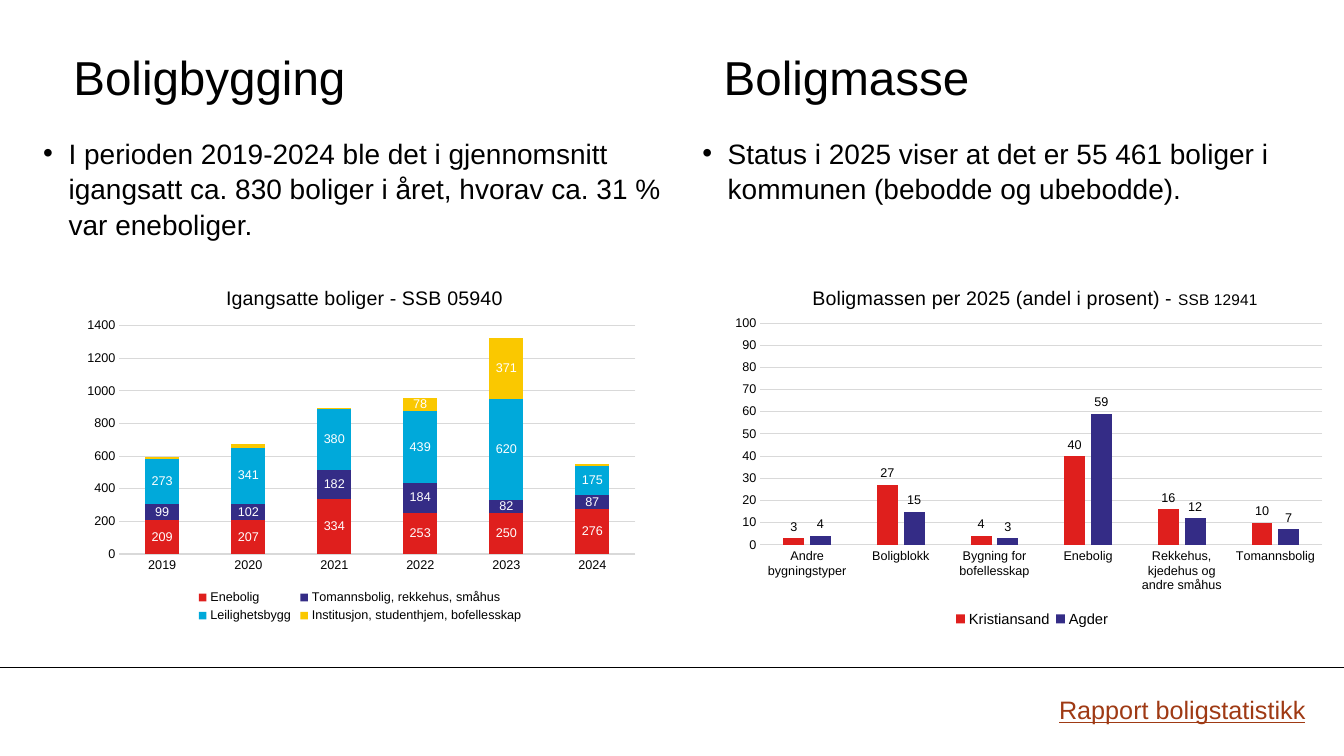
from lxml import etree
from pptx import Presentation
from pptx.chart.data import CategoryChartData
from pptx.dml.color import RGBColor
from pptx.enum.chart import XL_CHART_TYPE as Kind, XL_LABEL_POSITION as Spot
from pptx.enum.chart import XL_LEGEND_POSITION as Side, XL_TICK_MARK as Tick
from pptx.enum.shapes import MSO_CONNECTOR as Link
from pptx.enum.text import MSO_ANCHOR as Anchor
from pptx.oxml import parse_xml
from pptx.oxml.ns import nsdecls, qn
from pptx.util import Cm, Pt

RED, NAVY, CYAN, GOLD = "DF1F1D", "342C86", "00A9DA", "FAC800"
BLACK, WHITE, GREY, RUST = "000000", "FFFFFF", "D9D9D9", "9F3A14"


def color(code):
    return RGBColor.from_string(code)


def style(font, size, ink=BLACK, under=None):
    font.name, font.size, font.bold = "Arial", Pt(size), False
    font.color.rgb = color(ink)
    if under:
        font.underline = True


def write(para, text, size=20, ink=BLACK, under=None):
    run = para.add_run()
    run.text = text
    style(run.font, size, ink, under)


def stroke(line, ink, width=0.75):
    line.color.rgb = color(ink)
    line.width = Pt(width)


def arrange(part, index, inner=False, **spots):
    """Fix a chart part at fractions of the chart area."""
    for old in part.findall(qn("c:layout")):
        part.remove(old)
    target = '<c:layoutTarget val="inner"/>' if inner else ""
    modes = "".join(f'<c:{k}Mode val="edge"/>' for k in "xy")
    sizes = "".join(f'<c:{k} val="{v}"/>' for k, v in spots.items())
    part.insert(index, parse_xml(
        f'<c:layout {nsdecls("c")}><c:manualLayout>{target}{modes}{sizes}'
        "</c:manualLayout></c:layout>"))


class Page:
    def __init__(self, deck):
        self.slide = deck.slides.add_slide(deck.slide_layouts[6])
        self.shapes = self.slide.shapes

    def text(self, text, box, inset=0, bullet=False, middle=False, **look):
        frame = self.shapes.add_textbox(*map(Cm, box)).text_frame
        frame.word_wrap = True
        frame.margin_left = frame.margin_right = Cm(inset)
        frame.margin_top = frame.margin_bottom = Cm(inset / 2)
        if middle:
            frame.vertical_anchor = Anchor.MIDDLE
        para = frame.paragraphs[0]
        if bullet:
            props = para._p.get_or_add_pPr()
            props.set("marL", str(Cm(0.64)))
            props.set("indent", str(Cm(-0.64)))
            etree.SubElement(props, qn("a:buFont")).set("typeface", "Arial")
            etree.SubElement(props, qn("a:buChar")).set("char", "•")
            para.line_spacing = 1.05
        write(para, text, **look)

    def rule(self, top, width):
        line = self.shapes.add_connector(
            Link.STRAIGHT, 0, Cm(top), width, Cm(top))
        stroke(line.line, BLACK)
        etree.SubElement(line._element.spPr, qn("a:effectLst"))

    def chart(self, kind, box, title, cats, rows, gap, overlap,
              top, step, labels, key, spots):
        data = CategoryChartData()
        data.categories = cats
        for name, _, vals in rows:
            data.add_series(name, vals)
        chart = self.shapes.add_chart(kind, *map(Cm, box), data).chart
        style(chart.font, 10)
        plot = chart.plots[0]
        plot.gap_width, plot.overlap, plot.vary_by_categories = gap, overlap, False
        for series, (_, ink, _) in zip(plot.series, rows):
            series.format.fill.solid()
            series.format.fill.fore_color.rgb = color(ink)
            series.invert_if_negative = False
            self.label(series, ink, **labels)

        self.axes(chart, top, step)
        chart.has_title = True
        para = chart.chart_title.text_frame.paragraphs[0]
        for text, size in title:
            write(para, text, size)
        chart.has_legend = True
        legend = chart.legend
        legend.position, legend.include_in_layout = Side.BOTTOM, False
        style(legend.font, key)

        area = chart._chartSpace.chart.plotArea
        arrange(area, 0, True, **spots["plot"])
        arrange(chart.chart_title._element, 1, **spots["title"])
        arrange(legend._element, 1, **spots["legend"])

    def label(self, series, ink, text, spot=None):
        tags = series.data_labels
        style(tags.font, 9, text)
        tags.show_value = ink != GOLD
        if spot:
            tags.position = spot
        if ink == GOLD:
            for index in (3, 4):
                style(series.points[index].data_label.font, 9, text)

    def axes(self, chart, top, step):
        cat, val = chart.category_axis, chart.value_axis
        for axis in (cat, val):
            axis.major_tick_mark = axis.minor_tick_mark = Tick.NONE
            style(axis.tick_labels.font, 9)
        stroke(cat.format.line, GREY)
        val.format.line.fill.background()
        val.has_major_gridlines = True
        stroke(val.major_gridlines.format.line, GREY)
        val.minimum_scale, val.maximum_scale, val.major_unit = 0, top, step


def main():
    deck = Presentation()
    deck.slide_width, deck.slide_height = Cm(33.87), Cm(19.05)
    page = Page(deck)
    page.rule(16.81, deck.slide_width)

    for left, head in ((1.85, "Boligbygging"), (18.24, "Boligmasse")):
        page.text(head, (left, 0.97, 12.47, 1.91), middle=True, size=34)
    page.text("I perioden 2019-2024 ble det i gjennomsnitt igangsatt ca. 830 "
              "boliger i året, hvorav ca. 31 % var eneboliger.",
              (1.09, 3.4, 15.6, 2.77), bullet=True)
    page.text("Status i 2025 viser at det er 55 461 boliger i kommunen "
              "(bebodde og ubebodde).", (17.7, 3.4, 14.88, 2.13), bullet=True)
    page.text("Rapport boligstatistikk", (26.44, 17.37, 6.73, 1.02),
              inset=0.25, size=18, ink=RUST, under=True)

    page.chart(
        Kind.COLUMN_STACKED, (1.85, 6.65, 14.45, 9.14),
        [("Igangsatte boliger - SSB 05940", 14)],
        [str(year) for year in range(2019, 2025)],
        [("Enebolig", RED, (209, 207, 334, 253, 250, 276)),
         ("Tomannsbolig, rekkehus, småhus", NAVY, (99, 102, 182, 184, 82, 87)),
         ("Leilighetsbygg", CYAN, (273, 341, 380, 439, 620, 175)),
         ("Institusjon, studenthjem, bofellesskap", GOLD, (15, 27, 1, 78, 371, 11))],
        gap=150, overlap=100, top=1400, step=200, labels={"text": WHITE}, key=9,
        spots={"plot": {"x": 0.08, "y": 0.17, "w": 0.9, "h": 0.63},
               "title": {"x": 0.26, "y": 0.05},
               "legend": {"x": 0.21, "y": 0.89, "w": 0.58, "h": 0.11}})
    page.chart(
        Kind.COLUMN_CLUSTERED, (18.24, 6.65, 15.39, 9.32),
        [("Boligmassen per 2025 (andel i prosent) - ", 14), ("SSB 12941", 11)],
        ["Andre bygningstyper", "Boligblokk", "Bygning for bofellesskap",
         "Enebolig", "Rekkehus, kjedehus og andre småhus", "Tomannsbolig"],
        [("Kristiansand", RED, (3, 27, 4, 40, 16, 10)),
         ("Agder", NAVY, (4, 15, 3, 59, 12, 7))],
        gap=219, overlap=-27, top=100, step=10, key=10.5,
        labels={"text": BLACK, "spot": Spot.OUTSIDE_END},
        spots={"plot": {"x": 0.06, "y": 0.16, "w": 0.92, "h": 0.6},
               "title": {"x": 0.14, "y": 0.05},
               "legend": {"x": 0.37, "y": 0.94, "w": 0.27, "h": 0.06}})
    deck.save("out.pptx")


if __name__ == "__main__":
    main()
